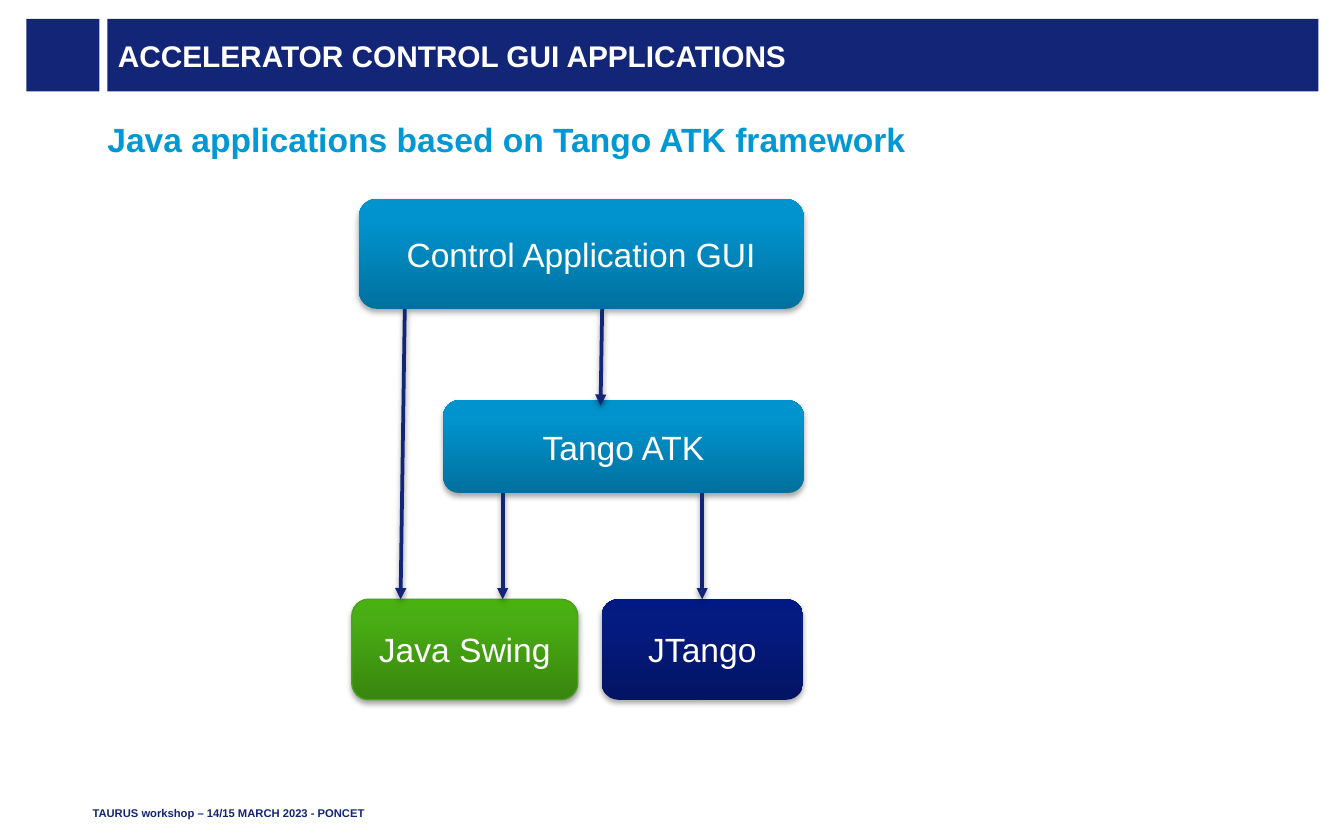
from copy import deepcopy

from lxml.etree import SubElement
from pptx import Presentation
from pptx.dml.color import RGBColor
from pptx.enum.shapes import MSO_CONNECTOR, MSO_SHAPE
from pptx.enum.text import MSO_ANCHOR, PP_ALIGN
from pptx.oxml.ns import qn
from pptx.util import Cm, Pt

COLORS = {
    "navy": "132577",
    "cyan": "0098D4",
    "white": "FFFFFF",
    "black": "000000",
    "swing_edge": "4E9F22",
}
GRADIENTS = {
    "blue": ("00719E", "0093CD", "0094CE"),
    "navy": ("031464", "041B82", "011985"),
    "green": ("38850F", "49AD13", "49B110"),
}
STOP_POSITIONS = (0, 0.8, 1)


def rgb(name):
    """Return the named colour."""
    return RGBColor.from_string(COLORS[name])


def write(shape, text, size=18, color="white", bold=False, align=PP_ALIGN.LEFT,
          anchor=MSO_ANCHOR.MIDDLE, inset=(0, 0), after=0):
    """Put formatted text in a shape, with side and top insets in cm."""
    frame = shape.text_frame
    frame.word_wrap = True
    frame.vertical_anchor = anchor
    frame.margin_left = frame.margin_right = Cm(inset[0])
    frame.margin_top = frame.margin_bottom = Cm(inset[1])
    paragraph = frame.paragraphs[0]
    paragraph.text = text
    paragraph.alignment = align
    paragraph.space_after = Pt(after)
    font = paragraph.runs[0].font
    font.name, font.size, font.bold = "Arial", Pt(size), bold
    font.color.rgb = rgb(color)


def add_text(slide, box, text, **style):
    """Add a text box at (left, top, width, height) in cm."""
    write(slide.shapes.add_textbox(*map(Cm, box)), text, **style)


def add_shadow(properties, opacity, distance):
    """Give shape properties a soft shadow that falls downwards."""
    effects = properties.find(qn("a:effectLst"))
    if effects is None:
        effects = SubElement(properties, qn("a:effectLst"))
    shadow = SubElement(effects, qn("a:outerShdw"), blurRad=str(Pt(3.1)),
                        dist=str(Pt(distance)), dir="5400000", rotWithShape="0")
    tint = SubElement(shadow, qn("a:srgbClr"), val=COLORS["black"])
    SubElement(tint, qn("a:alpha"), val=str(opacity * 1000))


def add_bar(slide, box):
    """Add a plain navy rectangle."""
    bar = slide.shapes.add_shape(MSO_SHAPE.RECTANGLE, *map(Cm, box))
    bar.shadow.inherit = False
    bar.fill.solid()
    bar.fill.fore_color.rgb = rgb("navy")
    bar.line.fill.background()
    return bar


def add_node(slide, box, label, gradient, edge=None):
    """Add a rounded box of the diagram with its label."""
    node = slide.shapes.add_shape(MSO_SHAPE.ROUNDED_RECTANGLE, *map(Cm, box))
    node.fill.gradient()
    node.fill.gradient_angle = 90
    properties = node._element.spPr
    first_stop = properties.find(".//" + qn("a:gs"))
    first_stop.addnext(deepcopy(first_stop))
    stops = zip(node.fill.gradient_stops, STOP_POSITIONS, GRADIENTS[gradient])
    for stop, position, color in stops:
        stop.position = position
        stop.color.rgb = RGBColor.from_string(color)
    if edge:
        node.line.color.rgb = rgb(edge)
        node.line.width = Pt(0.75)
    else:
        node.line.fill.background()
    node.shadow.inherit = False
    add_shadow(properties, 35, 1.8)
    write(node, label, align=PP_ALIGN.CENTER, inset=(0.25, 0.13))


def add_arrow(slide, start, end):
    """Add a navy arrow between two points in cm."""
    arrow = slide.shapes.add_connector(
        MSO_CONNECTOR.STRAIGHT, *map(Cm, (*start, *end)))
    arrow.line.color.rgb = rgb("navy")
    arrow.line.width = Pt(2)
    SubElement(arrow.line._get_or_add_ln(), qn("a:tailEnd"), type="triangle")
    add_shadow(arrow._element.spPr, 38, 1.6)


def add_header(slide, left, top, width, height):
    """Add the square and the title bar side by side."""
    title_offset = 1.53
    add_bar(slide, (left, top, 1.38, height))
    title = add_bar(slide, (left + title_offset, top, width - title_offset, height))
    write(title, "ACCELERATOR CONTROL GUI APPLICATIONS", size=16, bold=True,
          inset=(0.2, 0))


def add_diagram(slide, left, top, width, height):
    """Add the layers of the application and the arrows between them."""
    base_height = 1.9
    base_top = height - base_height
    atk_top, atk_width, atk_height = 3.81, 6.81, 1.75
    app_width, app_height = 8.41, 2.08
    atk_bottom = atk_top + atk_height
    nodes = (
        ("Control Application GUI", "blue", None,
         (width - app_width, 0, app_width, app_height)),
        ("Tango ATK", "blue", None,
         (width - atk_width, atk_top, atk_width, atk_height)),
        ("JTango", "navy", None, (4.72, base_top, 3.81, base_height)),
        ("Java Swing", "green", "swing_edge", (0, base_top, 4.27, base_height)),
    )
    for label, gradient, edge, (x, y, w, h) in nodes:
        add_node(slide, (left + x, top + y, w, h), label, gradient, edge)
    arrows = (
        (1, app_height, 0.92, base_top),
        (4.73, app_height, 4.7, atk_top + 0.1),
        (2.85, atk_bottom, 2.85, base_top),
        (6.62, atk_bottom, 6.62, base_top),
    )
    for x1, y1, x2, y2 in arrows:
        add_arrow(slide, (left + x1, top + y1), (left + x2, top + y2))


def main():
    """Build and save the slide."""
    deck = Presentation()
    deck.slide_width, deck.slide_height = Cm(25.4), Cm(15.88)
    slide = deck.slides.add_slide(deck.slide_layouts[6])
    add_header(slide, 0.5, 0.36, 24.42, 1.37)
    add_text(slide, (2.03, 2.24, 22.89, 12.04),
             "Java applications based on Tango ATK framework",
             color="cyan", bold=True, anchor=MSO_ANCHOR.TOP, after=10)
    add_text(slide, (1.75, 15.01, 16.99, 0.48),
             "TAURUS workshop – 14/15 MARCH 2023 - PONCET",
             size=6, color="navy", bold=True, anchor=MSO_ANCHOR.BOTTOM)
    add_diagram(slide, 6.65, 3.76, 8.54, 9.47)
    deck.save("out.pptx")


if __name__ == "__main__":
    main()
